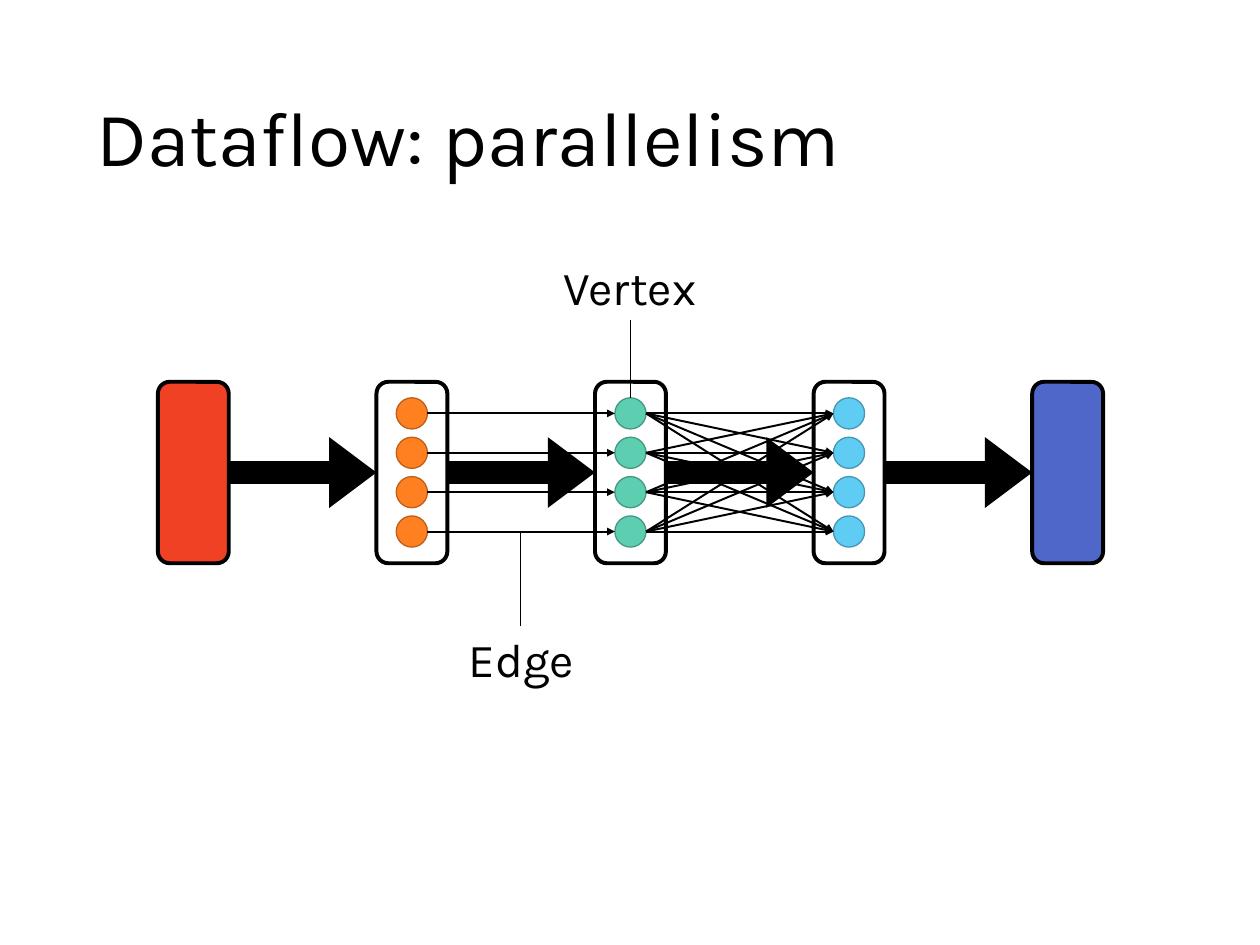
"""Build the slide on parallelism in a dataflow graph."""
import itertools

import lxml.etree
import pptx
import pptx.dml.color
import pptx.enum.shapes
import pptx.enum.text
import pptx.oxml.ns
import pptx.util

Inches = pptx.util.Inches
Pt = pptx.util.Pt
SHAPE = pptx.enum.shapes.MSO_SHAPE
ALIGN = pptx.enum.text.PP_ALIGN
ANCHOR = pptx.enum.text.MSO_ANCHOR
rgb = pptx.dml.color.RGBColor.from_string
qn = pptx.oxml.ns.qn

deck = pptx.Presentation()
deck.slide_width = Inches(13.33)
deck.slide_height = Inches(10)
slide = deck.slides.add_slide(deck.slide_layouts[6])


def add_line(x1, y1, x2, y2, weight, head_length=None):
    line = slide.shapes.add_connector(
        pptx.enum.shapes.MSO_CONNECTOR.STRAIGHT,
        Inches(x1), Inches(y1), Inches(x2), Inches(y2))
    line.line.color.rgb = rgb("000000")
    line.line.width = Pt(weight)
    if head_length:
        tail = lxml.etree.SubElement(line.line._get_or_add_ln(), qn("a:tailEnd"))
        tail.set("type", "triangle")
        tail.set("len", head_length)
    lxml.etree.SubElement(line._element.spPr, qn("a:effectLst"))


def add_text(text, left, top, width, height, size, align, anchor, spacing=1.0):
    box = slide.shapes.add_textbox(Inches(left), Inches(top), Inches(width), Inches(height))
    frame = box.text_frame
    frame.word_wrap = True
    frame.vertical_anchor = anchor
    frame.text = text
    paragraph = frame.paragraphs[0]
    paragraph.alignment = align
    paragraph.line_spacing = spacing
    font = paragraph.runs[0].font
    font.name = "Karla"
    font.size = Pt(size)
    font.color.rgb = rgb("000000")


stage_width, stage_height, stage_top = 0.75, 1.92, 4.04
stage_lefts = [1.67 + 9.25 * i / 4 for i in range(5)]
stage_fills = ["F14124", "FFFFFF", "FFFFFF", "FFFFFF", "4E67C8"]
vertex_size = 0.33
vertex_lefts = [left + (stage_width - vertex_size) / 2 for left in stage_lefts[1:4]]
vertex_colors = [("FF8021", "BD5F18"), ("5DCEAF", "459881"), ("5ECCF3", "4697B4")]
row_centers = [5 + 1.25 * (i - 1.5) / 3 for i in range(4)]

add_text("Dataflow: parallelism", 0.92, 0.53, 11.5, 1.93, 58.7, ALIGN.LEFT, ANCHOR.MIDDLE, 0.9)

for left, next_left in itertools.pairwise(stage_lefts):
    add_line(left + stage_width, 5, next_left, 5, 18, "sm")

nodes = [
    (SHAPE.ROUNDED_RECTANGLE, left, stage_top, stage_width, stage_height, fill, "000000", 3)
    for left, fill in zip(stage_lefts, stage_fills)
]
nodes += [
    (SHAPE.OVAL, left, center - vertex_size / 2, vertex_size, vertex_size, fill, outline, 1)
    for left, (fill, outline) in zip(vertex_lefts, vertex_colors)
    for center in row_centers
]
for kind, left, top, width, height, fill, outline, weight in nodes:
    node = slide.shapes.add_shape(kind, Inches(left), Inches(top), Inches(width), Inches(height))
    node.shadow.inherit = False
    node.fill.solid()
    node.fill.fore_color.rgb = rgb(fill)
    node.line.color.rgb = rgb(outline)
    node.line.width = Pt(weight)

first, second, third = vertex_lefts
for start, end in itertools.product(row_centers, repeat=2):
    add_line(second + vertex_size, start, third, end, 1.5, "med")
for center in row_centers:
    add_line(first + vertex_size, center, second, center, 1.5, "med")

add_text("Vertex", 4.53, 2.68, 4.27, 0.71, 36, ALIGN.CENTER, ANCHOR.TOP)
add_line(6.67, 3.39, 6.67, 4.21, 0.5)
add_text("Edge", 3.38, 6.62, 4.27, 0.71, 36, ALIGN.CENTER, ANCHOR.TOP)
add_line(5.51, 5.63, 5.51, 6.62, 0.5)

deck.save("out.pptx")
